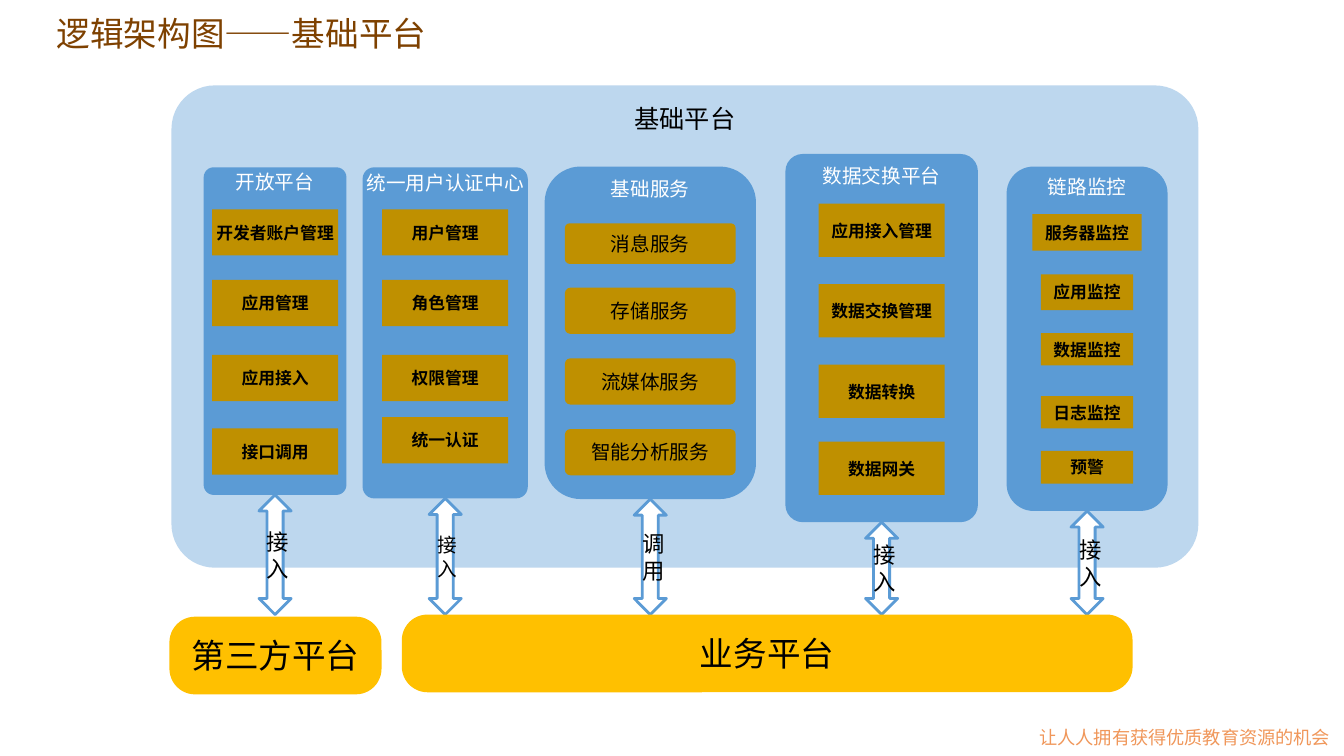
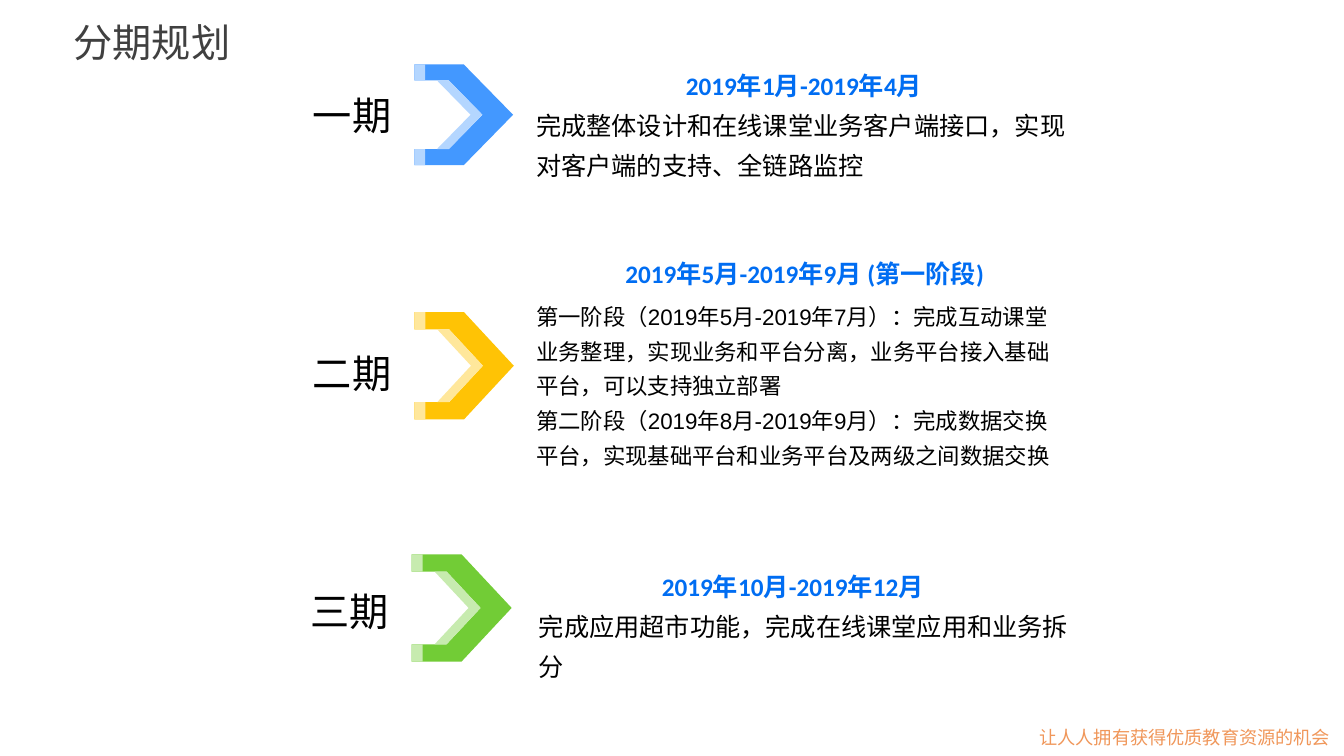
from pptx import Presentation
from pptx.dml.color import RGBColor
from pptx.enum.shapes import MSO_SHAPE
from pptx.enum.text import MSO_ANCHOR, PP_ALIGN
from pptx.oxml.ns import qn
from pptx.util import Pt
from lxml import etree

RECT = MSO_SHAPE.RECTANGLE
ROUND = MSO_SHAPE.ROUNDED_RECTANGLE
ALTERNATE = MSO_SHAPE.FLOWCHART_ALTERNATE_PROCESS
ARROW = MSO_SHAPE.UP_DOWN_ARROW
TOP, MIDDLE = MSO_ANCHOR.TOP, MSO_ANCHOR.MIDDLE
LEFT, CENTER = PP_ALIGN.LEFT, PP_ALIGN.CENTER

COLORS = {
    "white": "FFFFFF", "black": "000000", "brown": "7E4100", "grey": "404040",
    "orange": "ED7D31", "panel": "BDD7EE", "column": "5B9BD5", "item": "BF9000",
    "platform": "FFC000", "date": "006DF2",
    "blue": "4398FF", "blue_light": "B4D6FF",
    "yellow": "FFC305", "yellow_light": "FFE79B",
    "green": "72CC36", "green_light": "C7EBAF",
}
NOTO, NOTO_JP, ARIAL, CALIBRI = "Noto Sans CJK SC", "Noto Sans CJK JP", "Arial", "Calibri"
WIDTH, HEIGHT = 960, 540
PLATFORM_TOP = 439


def color(name):
    return RGBColor.from_string(COLORS[name])


def write(box, texts, size, font=ARIAL, ink="black", bold=False, align=CENTER,
          anchor=MIDDLE, inset=(0, 0), spacing=None, wrap=True):
    """Fill a shape with one paragraph per text; inset is (horizontal, vertical)."""
    frame = box.text_frame
    frame.word_wrap = wrap
    frame.vertical_anchor = anchor
    frame.margin_left = frame.margin_right = Pt(inset[0])
    frame.margin_top = frame.margin_bottom = Pt(inset[1])
    for index, text in enumerate(texts):
        para = frame.add_paragraph() if index else frame.paragraphs[0]
        para.alignment = align
        if spacing:
            para.line_spacing = spacing
        span = para.add_run()
        span.text = text
        span.font.size = Pt(size)
        span.font.name = font
        span.font.bold = bold
        span.font.color.rgb = color(ink)
        latin = span.font._element.find(qn("a:latin"))
        east_asian = etree.Element(qn("a:ea"), typeface=font)
        latin.addnext(east_asian)


def paint(shape, fill, line=None):
    shape.shadow.inherit = False
    shape.fill.solid()
    shape.fill.fore_color.rgb = color(fill)
    if line:
        shape.line.color.rgb = color(line)
        shape.line.width = Pt(2)
    else:
        shape.line.fill.background()


def add_block(page, kind, area, fill, adjust=None, line=None):
    shape = page.shapes.add_shape(kind, *map(Pt, area))
    paint(shape, fill, line)
    if adjust is not None:
        shape.adjustments[0] = adjust
    return shape


def add_text(page, area, texts, size, **style):
    box = page.shapes.add_textbox(*map(Pt, area))
    write(box, texts, size, **style)


def new_page(deck):
    """Blank page with the shared slogan under a translucent band."""
    page = deck.slides.add_slide(deck.slide_layouts[6])
    add_text(page, (741, 517.5, 212, 19.5), ["让人人拥有获得优质教育资源的机会"], 13,
             font=NOTO_JP, ink="orange", align=LEFT, anchor=TOP,
             inset=(1.5, 1.5), wrap=False)
    band = add_block(page, RECT, (0, 511, WIDTH, 29), "white")
    solid = band.fill._xPr.find(qn("a:solidFill"))
    etree.SubElement(solid[0], qn("a:alpha"), val="20000")
    return page


# Each column: area, shape, corner, title inset, (link text, size), item style, items.
# Each item: text, offset from the column top, height, width.
BOLD_ITEM = dict(kind=RECT, adjust=None, size=12, font=ARIAL, bold=True)
SERVICE_ITEM = dict(kind=ROUND, adjust=0.12, size=14, font=NOTO, bold=False)
COLUMNS = [
    ("开放平台", (145.5, 119.5, 102, 234), ROUND, 0.07, (0, 0), ("接入", 16), BOLD_ITEM, [
        ("开发者账户管理", 30, 33, 90), ("应用管理", 80.5, 33, 90),
        ("应用接入", 134, 33, 90), ("接口调用", 186.5, 33, 90)]),
    ("统一用户认证中心", (259, 119.5, 118, 236.5), ROUND, 0.07, (0, 0), ("接入", 14), BOLD_ITEM, [
        ("用户管理", 30, 33, 90), ("角色管理", 80.5, 33, 90),
        ("权限管理", 134, 33, 90), ("统一认证", 178.5, 33, 90)]),
    ("基础服务", (389, 119, 151, 237.5), ROUND, 0.17, (0, 0), ("调用", 16), SERVICE_ITEM, [
        ("消息服务", 40.5, 29, 122), ("存储服务", 86.5, 33, 122),
        ("流媒体服务", 137, 33, 122), ("智能分析服务", 187.5, 33, 122)]),
    ("数据交换平台", (561, 110, 137.5, 263), ROUND, 0.09, (7.2, 3.6), ("接入", 16), BOLD_ITEM, [
        ("应用接入管理", 35.5, 38, 90), ("数据交换管理", 93, 38, 90),
        ("数据转换", 150.5, 38, 90), ("数据网关", 205.5, 38, 90)]),
    ("链路监控", (719, 119, 115, 246), ALTERNATE, None, (0, 0), ("接入", 16), BOLD_ITEM, [
        ("服务器监控", 34, 26, 78), ("应用监控", 77, 25.5, 66),
        ("数据监控", 119, 23, 66), ("日志监控", 164, 23, 66),
        ("预警", 203, 23.5, 66)]),
]


def draw_column(page, title, area, kind, corner, inset, link, style, items):
    left, top, width, height = area
    middle, bottom = left + width / 2, top + height
    column = add_block(page, kind, area, "column", corner)
    write(column, [title], 14, font=NOTO, ink="white", anchor=TOP, inset=inset)
    # Items, centred in the column
    for text, offset, item_height, item_width in items:
        place = (middle - item_width / 2, top + offset, item_width, item_height)
        item = add_block(page, style["kind"], place, "item", style["adjust"])
        write(item, [text], style["size"], font=style["font"], bold=style["bold"],
              inset=(2.5, 2.5))
    # Double arrow down to the platforms
    arrow = add_block(page, ARROW, (middle - 11.5, bottom, 23, PLATFORM_TOP - bottom),
                      "white", line="column")
    write(arrow, link[:1], link[1])


def draw_architecture(deck):
    page = new_page(deck)
    add_text(page, (39, 8, 326, 32.5), ["逻辑架构图——基础平台"], 24, font=NOTO,
             ink="brown", align=LEFT, anchor=TOP, inset=(1.5, 1.5))
    panel = add_block(page, ROUND, (122.5, 61, 733.5, 344.5), "panel", 0.09)
    write(panel, ["基础平台"], 18, font=NOTO, anchor=TOP, inset=(7.2, 3.6))
    for column in COLUMNS:
        draw_column(page, *column)
    # Platforms underneath
    for text, left, top, width in (("第三方平台", 121, PLATFORM_TOP + 1.5, 151.5),
                                   ("业务平台", 287, PLATFORM_TOP, 522)):
        platform = add_block(page, ROUND, (left, top, width, 55.5), "platform", 0.33)
        write(platform, [text], 24)


# Contours as fractions of the chevron's box
BODY = [[(0.5, 0), (0, 0), (0, 0.16), (0.35, 0.16), (0.69, 0.5), (0.35, 0.84),
         (0, 0.84), (0, 1), (0.5, 1), (1, 0.5)]]
HIGHLIGHT = [
    [(0, 0.84), (0.11, 0.84), (0.11, 1), (0, 1)],
    [(0.23, 0.16), (0.35, 0.16), (0.69, 0.5), (0.35, 0.84), (0.23, 0.84), (0.57, 0.5)],
    [(0, 0), (0.11, 0), (0.11, 0.16), (0, 0.16)],
]


def draw_chevron(page, area, name):
    left, top, width, height = area
    for contours, fill in ((BODY, name), (HIGHLIGHT, name + "_light")):
        builder = None
        for contour in contours:
            points = [(Pt(left + x * width), Pt(top + y * height)) for x, y in contour]
            if builder is None:
                builder = page.shapes.build_freeform(*points[0])
            else:
                builder.move_to(*points[0])
            builder.add_line_segments(points[1:], close=True)
        paint(builder.convert_to_shape(), fill)


PHASES = [
    dict(label="一期", label_shift=0, name="blue", chevron=(296, 46, 70.5, 72),
         text=(383, 42.5, 382.5), date_shift=0, date_height=30, body_height=67, size=18,
         date="2019年1月-2019年4月",
         body=["完成整体设计和在线课堂业务客户端接口，实现对客户端的支持、全链路监控"]),
    dict(label="二期", label_shift=5, name="yellow", chevron=(296, 223, 71, 76.5),
         text=(383, 173.5, 379.5), date_shift=2, date_height=37, body_height=128, size=16,
         date="2019年5月-2019年9月 (第一阶段)",
         body=["第一阶段（2019年5月-2019年7月）：完成互动课堂业务整理，实现业务和平台分离，"
               "业务平台接入基础平台，可以支持独立部署",
               "第二阶段（2019年8月-2019年9月）：完成数据交换平台，"
               "实现基础平台和业务平台及两级之间数据交换"]),
    dict(label="三期", label_shift=2, name="green", chevron=(294, 396, 71.5, 76.5),
         text=(385, 400.5, 386.5), date_shift=-12, date_height=30, body_height=67, size=18,
         date="2019年10月-2019年12月",
         body=["完成应用超市功能，完成在线课堂应用和业务拆分"]),
]


def draw_phase(page, phase):
    left, top, width, height = phase["chevron"]
    draw_chevron(page, phase["chevron"], phase["name"])
    label_top = top + height / 2 + phase["label_shift"] - 29
    add_text(page, (left - 102, label_top, 115, 58), [phase["label"]], 28)
    # Date line with the description below it
    text_left, text_top, text_width = phase["text"]
    add_text(page, (text_left + phase["date_shift"], text_top, text_width, phase["date_height"]),
             [phase["date"]], 18, font=CALIBRI, ink="date", bold=True, spacing=1.3)
    add_text(page, (text_left, text_top + phase["date_height"], text_width, phase["body_height"]),
             phase["body"], phase["size"], align=LEFT, anchor=TOP, spacing=1.3)


def draw_plan(deck):
    page = new_page(deck)
    add_text(page, (45.5, 10, 454, 39.5), ["分期规划"], 28, ink="grey", align=LEFT,
             anchor=TOP, inset=(7.2, 0), spacing=1.1)
    for phase in PHASES:
        draw_phase(page, phase)


def main():
    deck = Presentation()
    deck.slide_width, deck.slide_height = Pt(WIDTH), Pt(HEIGHT)
    draw_architecture(deck)
    draw_plan(deck)
    deck.save("out.pptx")


if __name__ == "__main__":
    main()
